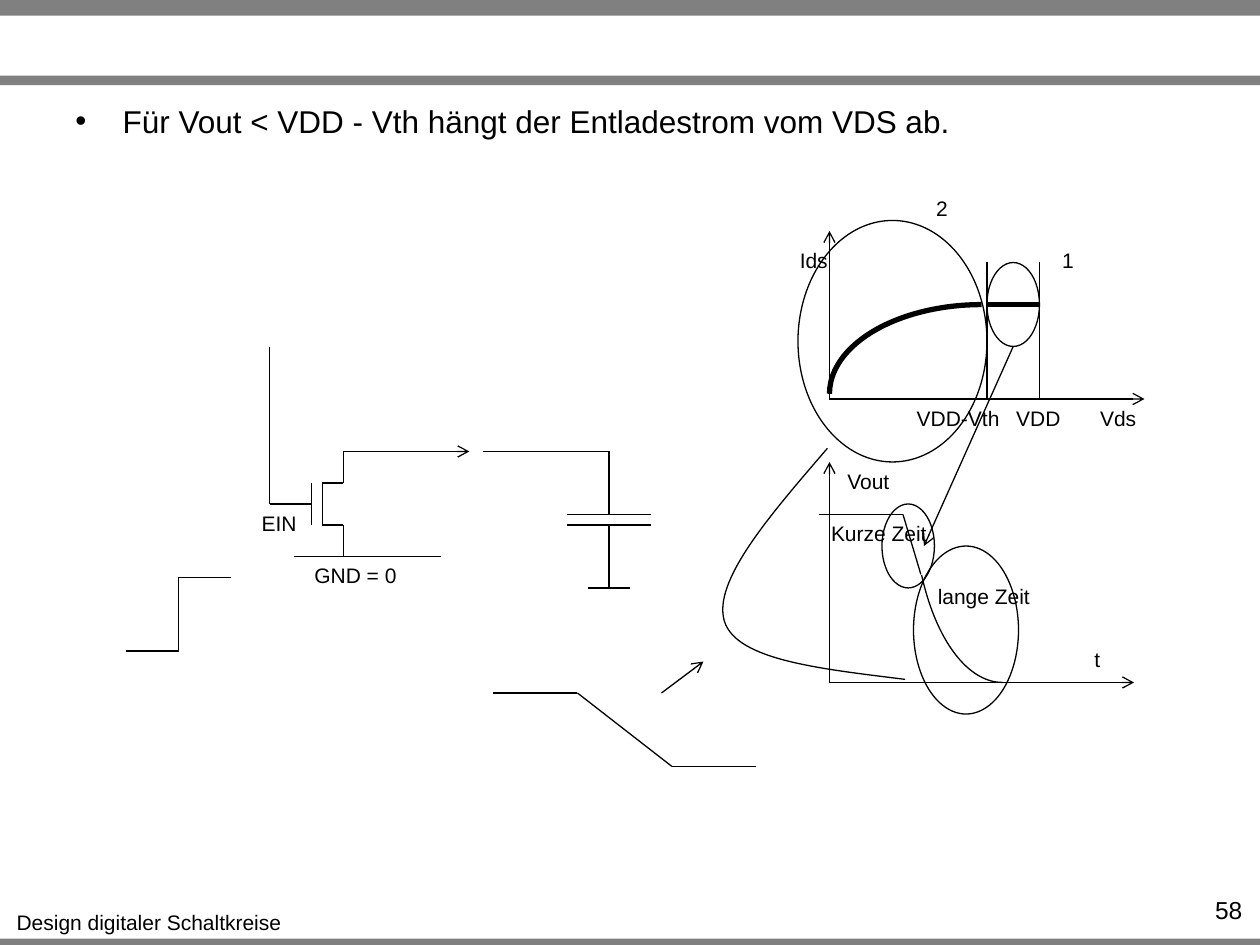
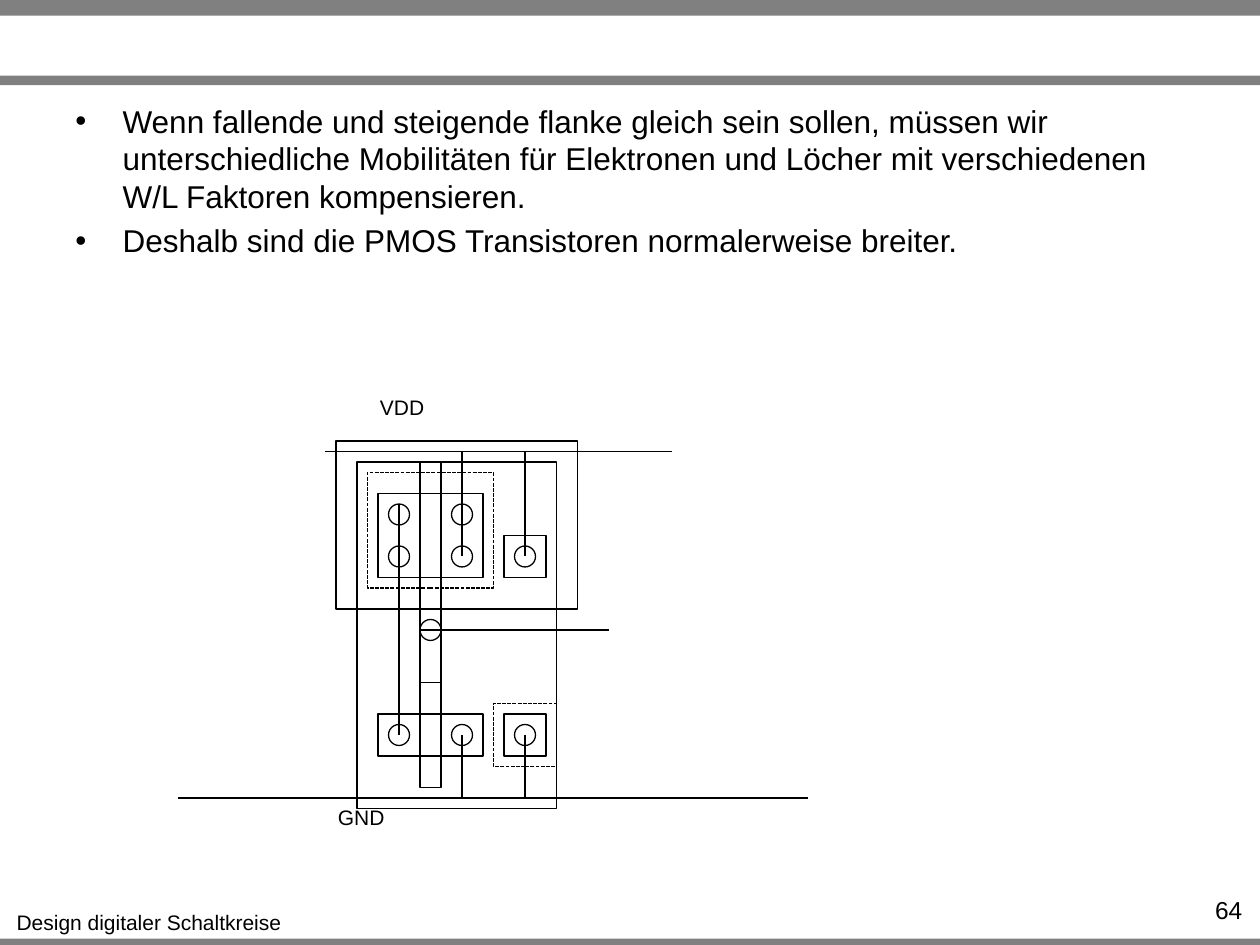
import pptx
import pptx.util
import pptx.dml.color
import pptx.enum.dml
import pptx.enum.shapes
import pptx.enum.text
import pptx.oxml
import pptx.oxml.ns

PX = 7620
COLORS = {"band": "808080", "ink": "000000"}
FONT = "Arial"
THIN, THICK = 0.75, 3
KINDS = pptx.enum.shapes.MSO_SHAPE
CONNECTORS = pptx.enum.shapes.MSO_CONNECTOR
ALIGN = pptx.enum.text.PP_ALIGN
qn = pptx.oxml.ns.qn
NAMESPACE = pptx.oxml.ns.nsdecls("a")


def write_text(page, left, top, width, height, lines, size, align, wrap=False):
    box = page.shapes.add_textbox(left * PX, top * PX, width * PX, height * PX)
    frame = box.text_frame
    frame.word_wrap = wrap
    if not wrap:
        frame.auto_size = pptx.enum.text.MSO_AUTO_SIZE.SHAPE_TO_FIT_TEXT
    for index, line in enumerate(lines):
        para = frame.paragraphs[0] if index == 0 else frame.add_paragraph()
        para.alignment = align
        span = para.add_run()
        span.text = line
        span.font.name = FONT
        span.font.size = pptx.util.Pt(size)
        span.font.color.rgb = pptx.dml.color.RGBColor.from_string(COLORS["ink"])
    return frame


def draw_outline(shape, weight=THIN):
    shape.line.color.rgb = pptx.dml.color.RGBColor.from_string(COLORS["ink"])
    shape.line.width = pptx.util.Pt(weight)
    if hasattr(shape, "fill"):
        shape.fill.background()
        shape.shadow.inherit = False
    else:
        properties = shape.element.find(qn("p:spPr"))
        properties.append(pptx.oxml.parse_xml(f"<a:effectLst {NAMESPACE}/>"))


deck = pptx.Presentation()
deck.slide_width = 1200 * PX
deck.slide_height = 900 * PX

contents = [
    (58, 80, ["Für Vout < VDD - Vth hängt der Entladestrom vom VDS ab."]),
    (64, 170, [
        "Wenn fallende und steigende flanke gleich sein sollen, müssen wir "
        "unterschiedliche Mobilitäten für Elektronen und Löcher mit verschiedenen "
        "W/L Faktoren kompensieren.",
        "Deshalb sind die PMOS Transistoren normalerweise breiter.",
    ]),
]
pages = []
for number, body_height, bullets in contents:
    page = deck.slides.add_slide(deck.slide_layouts[6])
    pages.append(page)
    for top, height in [(894, 6), (0, 15), (72, 9)]:
        band = page.shapes.add_shape(KINDS.RECTANGLE, 0, top * PX, 1200 * PX, height * PX)
        band.shadow.inherit = False
        band.fill.solid()
        band.fill.fore_color.rgb = pptx.dml.color.RGBColor.from_string(COLORS["band"])
        band.line.fill.background()
    write_text(page, 2, 860, 280, 36, ["Design digitaler Schaltkreise"], 12, ALIGN.CENTER)
    write_text(page, 1091, 847, 104, 29, [str(number)], 14, ALIGN.RIGHT, wrap=True)
    body = write_text(page, 60, 91, 1080, body_height, bullets, 18, ALIGN.LEFT, wrap=True)
    for para in body.paragraphs:
        para.space_before = pptx.util.Pt(3.6)
        properties = para._p.get_or_add_pPr()
        properties.set("marL", str(45 * PX))
        properties.set("indent", str(-45 * PX))
        properties.append(pptx.oxml.parse_xml(f'<a:buFont {NAMESPACE} typeface="{FONT}"/>'))
        properties.append(pptx.oxml.parse_xml(f'<a:buChar {NAMESPACE} char="•"/>'))

discharge, layout = pages

discharge_wires = [
    [(460, 430), (580, 430), (580, 490)],
    [(540, 490), (620, 490)],
    [(540, 500), (620, 500)],
    [(580, 500), (580, 560)],
    [(560, 560), (600, 560)],
    [(280, 530), (420, 530)],
    [(257, 330), (257, 380), (257, 480), (277, 480), (297, 480)],
    [(297, 460), (297, 500)],
    [(327, 430), (327, 460), (307, 460), (307, 500), (327, 500), (327, 530)],
    [(940, 250), (940, 380)],
    [(990, 250), (990, 380)],
    [(780, 490), (860, 490), (877, 547)],
    [(950, 650), (1030, 650)],
    [(470, 660), (550, 660), (640, 730), (720, 730)],
]
discharge_arrows = [
    [(327, 430), (447, 430)],
    [(790, 380), (1090, 380)],
    [(790, 380), (790, 220)],
    [(790, 650), (1080, 650)],
    [(790, 650), (790, 440)],
    [(965, 330), (880, 520)],
    [(630, 660), (670, 630)],
]
saturation_line = [(940, 290), (990, 290)]
layout_wires = [
    [(440, 430), (640, 430)],
    [(510, 430), (310, 430)],
    [(430, 760), (770, 760)],
    [(520, 760), (170, 760)],
    [(440, 430), (440, 530)],
    [(500, 430), (500, 530)],
    [(440, 700), (440, 760)],
    [(500, 700), (500, 760)],
    [(380, 480), (380, 700)],
    [(400, 600), (580, 600)],
]
wire_groups = [
    (discharge, discharge_wires, THIN, False),
    (discharge, discharge_arrows, THIN, True),
    (discharge, [saturation_line], THICK, False),
    (layout, layout_wires, THIN, False),
]
for page, wires, weight, has_arrow in wire_groups:
    for points in wires:
        for start, end in zip(points, points[1:]):
            wire = page.shapes.add_connector(
                CONNECTORS.STRAIGHT, *(value * PX for value in start + end))
            draw_outline(wire, weight)
            if has_arrow:
                outline = wire.element.find(qn("p:spPr")).find(qn("a:ln"))
                outline.append(pptx.oxml.parse_xml(f'<a:tailEnd {NAMESPACE} type="arrow"/>'))

input_step = discharge.shapes.add_connector(
    CONNECTORS.ELBOW, 120 * PX, 620 * PX, 220 * PX, 550 * PX)
draw_outline(input_step)

regions = [(760, 210, 180, 230), (940, 250, 50, 80), (840, 480, 50, 80), (870, 520, 100, 160)]
for region in regions:
    draw_outline(discharge.shapes.add_shape(KINDS.OVAL, *(value * PX for value in region)))

arcs = [
    ((850, 230, 170, 290), 270, 0, THICK),
    ((870, 300, 170, 350), 180, 190.1, THIN),
]
for frame, rotation, end_angle, weight in arcs:
    arc = discharge.shapes.add_shape(KINDS.ARC, *(value * PX for value in frame))
    arc.rotation = rotation
    arc.adjustments[0] = 162
    arc.adjustments[1] = end_angle
    draw_outline(arc, weight)

link_left, link_top = 690, 427
link_curves = [
    [(733, 491), (678, 554), (690, 592)],
    [(702, 629), (782, 637), (862, 647)],
]
builder = discharge.shapes.build_freeform(788, link_top, scale=PX)
builder.add_line_segments([curve[-1] for curve in link_curves], close=False)
link = builder.convert_to_shape()
draw_outline(link)
for segment, curve in zip(list(link.element.iter(qn("a:lnTo"))), link_curves):
    points = "".join(f'<a:pt x="{x - link_left}" y="{y - link_top}"/>' for x, y in curve)
    bend = pptx.oxml.parse_xml(f"<a:cubicBezTo {NAMESPACE}>{points}</a:cubicBezTo>")
    segment.getparent().replace(segment, bend)

solid_regions = [
    (320, 420, 230, 160), (340, 440, 190, 330),
    (360, 470, 100, 80), (360, 680, 100, 40),
    (400, 440, 20, 140), (400, 580, 20, 70), (400, 650, 20, 100),
    (480, 510, 40, 40), (480, 680, 40, 40),
]
dashed_regions = [(350, 450, 120, 110), (470, 670, 60, 60)]
for region in solid_regions + dashed_regions:
    area = layout.shapes.add_shape(KINDS.RECTANGLE, *(value * PX for value in region))
    draw_outline(area)
    if region in dashed_regions:
        area.line.dash_style = pptx.enum.dml.MSO_LINE.SQUARE_DOT

contacts = [(x, y) for y in (530, 700) for x in (380, 440, 500)]
contacts += [(380, 490), (440, 490), (410, 600)]
for x, y in contacts:
    draw_outline(layout.shapes.add_shape(
        KINDS.OVAL, (x - 10) * PX, (y - 10) * PX, 20 * PX, 20 * PX))

labels = [
    (discharge, "GND = 0", 286, 530, 105),
    (discharge, "EIN", 236, 480, 60),
    (discharge, "Ids", 748, 230, 54),
    (discharge, "Vds", 1034, 380, 62),
    (discharge, "VDD", 954, 380, 70),
    (discharge, "VDD-Vth", 860, 380, 105),
    (discharge, "t", 1029, 610, 32),
    (discharge, "Vout", 794, 440, 66),
    (discharge, "2", 879, 180, 36),
    (discharge, "1", 999, 230, 36),
    (discharge, "Kurze Zeit", 778, 490, 118),
    (discharge, "lange Zeit", 880, 550, 114),
    (layout, "VDD", 348, 370, 70),
    (layout, "GND", 308, 760, 72),
]
for page, text, left, top, width in labels:
    write_text(page, left, top, width, 36, [text], 12, ALIGN.CENTER)

deck.save("out.pptx")
